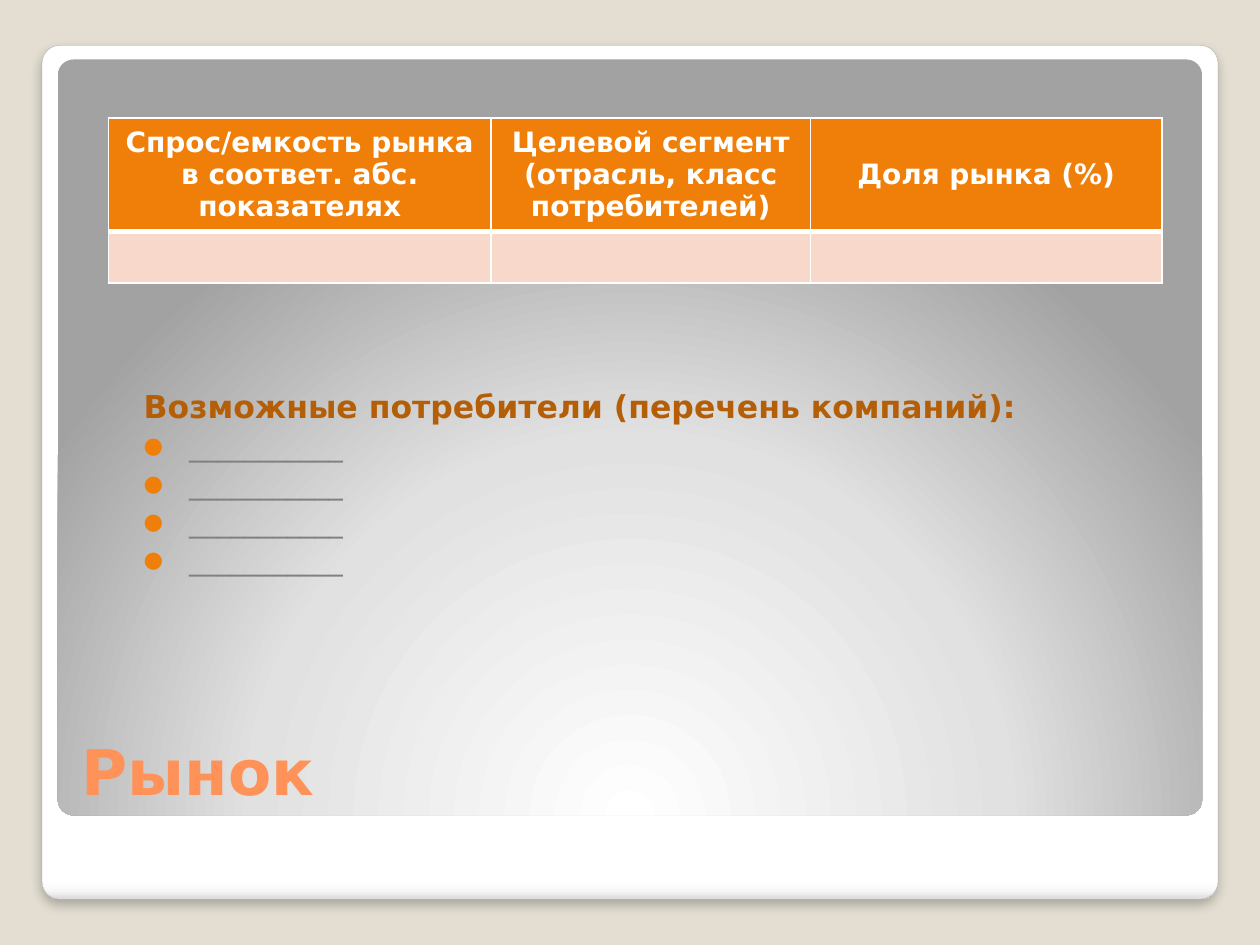
from lxml import etree
from pptx import Presentation
from pptx.dml.color import RGBColor
from pptx.enum import shapes, text
from pptx.oxml import parse_xml
from pptx.oxml.ns import nsdecls, qn
from pptx.util import Pt

TITLE = "Рынок"
HEADERS = [
    "Спрос/емкость рынка в соответ. абс. показателях",
    "Целевой сегмент (отрасль, класс потребителей)",
    "Доля рынка (%)",
]
MARKET_ROWS = [HEADERS, [""] * len(HEADERS)]
CONSUMERS_HEADING = "Возможные потребители (перечень компаний):"
CONSUMERS = [" ___________"] * 4

THEME = {
    "font": "DejaVu Sans",
    "background": "E3DED1", "edge": "A4A4A4", "white": "FFFFFF",
    "title": "FF9258", "heading": "B45F07", "body": "808080",
    "accent": "F07F09", "tint": "F9D8CC",
    "title_size": 36, "heading_size": 18, "body_size": 16,
}
CARD_STOPS = [(0, "FFFFFF"), (98, "FFFFFF"), (99, "F7F7F7"), (100, "DADADA")]
PANEL_STOPS = [(0, "FFFFFF"), (55, "E1E1E1"), (100, "A2A2A2")]
LINEAR = '<a:lin ang="5400000" scaled="0"/>'
RADIAL = ('<a:path path="circle"><a:fillToRect l="50000" t="175000" '
          'r="50000" b="-75000"/></a:path>')
COLUMN_WIDTHS = [218.6, 182.6, 200.8]
ROW_HEIGHTS = [62, 29.5]


def rgb(name):
    return RGBColor.from_string(THEME[name])


def style(paragraph, size, color, bold=False):
    for run in paragraph.runs:
        run.font.name = THEME["font"]
        run.font.size = Pt(THEME[size])
        run.font.color.rgb = rgb(color)
        run.font.bold = bold


def add_panel(slide, box, stops, direction):
    panel = slide.shapes.add_shape(
        shapes.MSO_SHAPE.ROUNDED_RECTANGLE, *map(Pt, box))
    panel.adjustments[0] = 0.021
    panel.shadow.inherit = False
    panel.line.fill.background()
    marks = "".join(
        f'<a:gs pos="{position * 1000}"><a:srgbClr val="{color}"/></a:gs>'
        for position, color in stops)
    gradient = parse_xml(
        f'<a:gradFill {nsdecls("a")} rotWithShape="1">'
        f'<a:gsLst>{marks}</a:gsLst>{direction}</a:gradFill>')
    panel._element.spPr.find(qn("a:prstGeom")).addnext(gradient)
    return panel


def add_shadow(panel):
    panel._element.spPr.find(qn("a:effectLst")).append(parse_xml(
        f'<a:outerShdw {nsdecls("a")} blurRad="{Pt(6)}" dist="{Pt(4)}" '
        'dir="5400000" algn="t" rotWithShape="0"><a:srgbClr val="000000">'
        '<a:alpha val="25000"/></a:srgbClr></a:outerShdw>'))


def add_text(slide, box, margins, anchor):
    frame = slide.shapes.add_textbox(*map(Pt, box)).text_frame
    frame.word_wrap = True
    frame.vertical_anchor = anchor
    (frame.margin_left, frame.margin_top,
     frame.margin_right, frame.margin_bottom) = map(Pt, margins)
    return frame


def add_bullet(paragraph):
    props = paragraph._p.get_or_add_pPr()
    props.set("marL", str(Pt(21)))
    props.set("indent", str(Pt(-21)))
    color = etree.SubElement(props, qn("a:buClr"))
    etree.SubElement(color, qn("a:srgbClr"), val=THEME["accent"])
    etree.SubElement(props, qn("a:buSzPct"), val="80000")
    etree.SubElement(props, qn("a:buFont"), typeface=THEME["font"])
    etree.SubElement(props, qn("a:buChar"), char="●")


def add_borders(cell, widths):
    props = cell._tc.get_or_add_tcPr()
    for side, width in zip("LRTB", widths):
        border = etree.SubElement(props, qn(f"a:ln{side}"), w=str(Pt(width)))
        fill = etree.SubElement(border, qn("a:solidFill"))
        etree.SubElement(fill, qn("a:srgbClr"), val=THEME["white"])


def add_market_table(slide):
    table = slide.shapes.add_table(
        len(MARKET_ROWS), len(HEADERS), Pt(62), Pt(67.5),
        Pt(sum(COLUMN_WIDTHS)), Pt(sum(ROW_HEIGHTS))).table
    for column, width in zip(table.columns, COLUMN_WIDTHS):
        column.width = Pt(width)
    for row, height, values in zip(table.rows, ROW_HEIGHTS, MARKET_ROWS):
        row.height = Pt(height)
        header = values is HEADERS
        for cell, value in zip(row.cells, values):
            add_borders(cell, (1, 1, 1, 3) if header else (1, 1, 3, 1))
            cell.fill.solid()
            cell.fill.fore_color.rgb = rgb("accent" if header else "tint")
            cell.vertical_anchor = text.MSO_ANCHOR.MIDDLE
            cell.text_frame.text = value
            paragraph = cell.text_frame.paragraphs[0]
            paragraph.alignment = text.PP_ALIGN.CENTER
            style(paragraph, "body_size", "white", True)


def add_consumers(slide):
    frame = add_text(slide, (67.7, 213.8, 596, 180), (14.4, 7.2, 7.2, 3.6),
                     text.MSO_ANCHOR.TOP)
    frame.text = "\n".join([CONSUMERS_HEADING, *CONSUMERS])
    heading, *consumers = frame.paragraphs
    for paragraph in frame.paragraphs:
        paragraph.space_before = Pt(2.5)
    style(heading, "heading_size", "heading", True)
    for consumer in consumers:
        style(consumer, "body_size", "body")
        add_bullet(consumer)


def main():
    deck = Presentation()
    deck.slide_width, deck.slide_height = Pt(720), Pt(540)
    slide = deck.slides.add_slide(deck.slide_layouts[6])
    slide.background.fill.solid()
    slide.background.fill.fore_color.rgb = rgb("background")

    card = add_panel(slide, (24, 25.9, 672, 488), CARD_STOPS, LINEAR)
    card.line.color.rgb = rgb("edge")
    card.line.width = Pt(0.16)
    add_shadow(card)
    add_panel(slide, (33, 34, 654, 432), PANEL_STOPS, RADIAL)

    title = add_text(slide, (39.6, 382.3, 644.4, 82.8), (7.2, 3.6, 7.2, 3.6),
                     text.MSO_ANCHOR.BOTTOM)
    title.text = TITLE
    style(title.paragraphs[0], "title_size", "title", True)
    add_consumers(slide)
    add_market_table(slide)
    deck.save("out.pptx")


if __name__ == "__main__":
    main()
